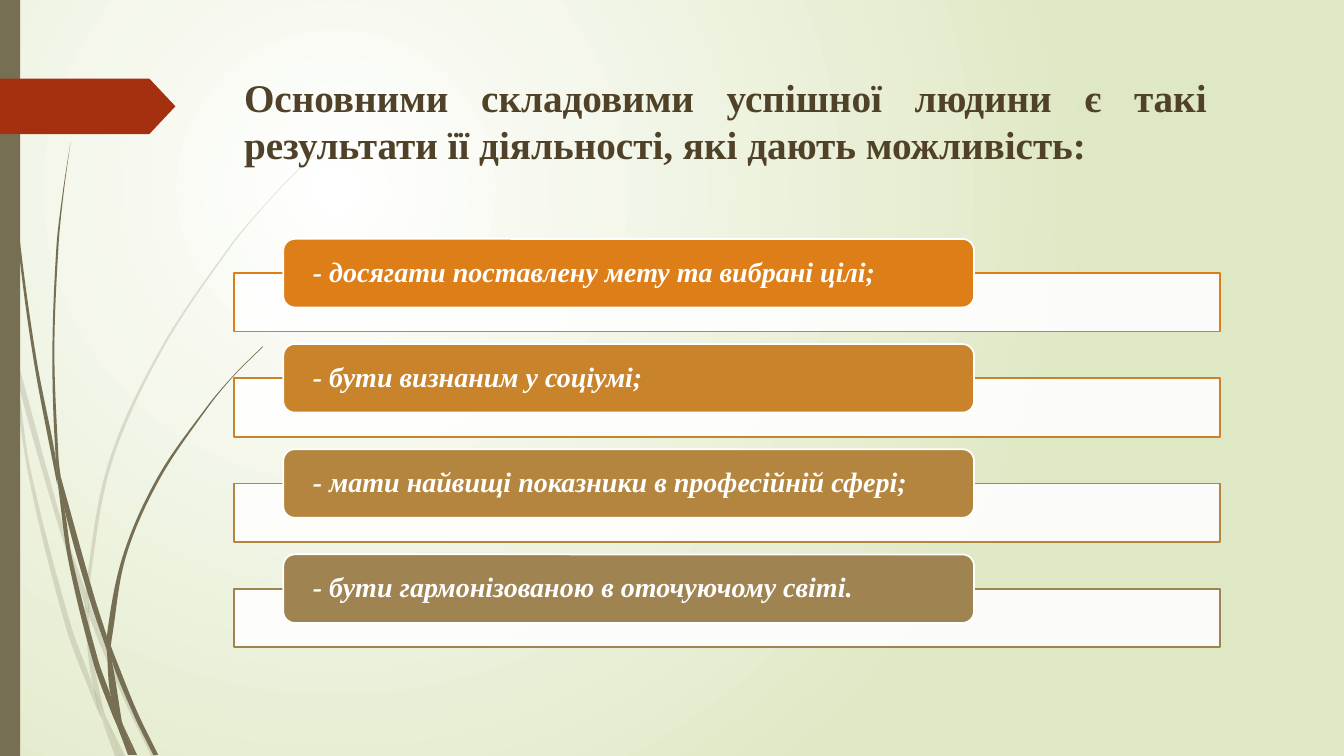
from dataclasses import dataclass

from lxml import etree
from pptx import Presentation
from pptx import util as u
from pptx.dml.color import RGBColor
from pptx.enum import shapes, text
from pptx.oxml.ns import qn

FONT = "Times New Roman"
HUES = {"white": "FFFFFF", "green": "DFE8C4", "olive": "766F54",
        "red": "A53010", "brown": "504228"}
FIRST, LAST = 2.37, 5.5  # tops of the first and last card
GRAIN = 1000  # outline units to the inch


@dataclass
class Leaf:
    """A piece of grass: x, y pairs down its left and its right edge."""
    left: tuple[float, ...]
    right: tuple[float, ...]


@dataclass
class Card:
    words: str
    hue: str


PALE = [
    Leaf((0, 2.99, .1, 3.44, .11, 3.5), (0, 2.82, .09, 3.22, .11, 3.5)),
    Leaf((.14, 3.45, .17, 3.76, .58, 5.22, .84, 5.99),
         (.14, 3.45, .62, 5.2, .85, 5.86)),
    Leaf((.88, 5.96, .88, 6.1, 1.23, 6.94, 1.5, 7.5),
         (.88, 5.96, .92, 6.07, 1.27, 6.92, 1.55, 7.5)),
    Leaf((1.05, 7.11, 1.19, 7.5), (1.05, 7.11, 1.24, 7.5)),
    Leaf((.11, 3.5, .28, 4.7, .65, 6.21, .92, 6.93, 1.01, 7.14),
         (.11, 3.5, .17, 3.76, .31, 4.69, .7, 6.19, .93, 6.83, 1.01, 7.14)),
    Leaf((.84, 5.99, .87, 6.46, .93, 6.83, 1.05, 7.11),
         (.84, 5.99, .88, 6.1, .91, 6.46, 1.03, 7.06, 1.05, 7.11)),
    Leaf((3.12, 1.53, 2.89, 1.75, 2.68, 1.97, 2.28, 2.44, 1.58, 3.48,
          1.07, 4.61, .85, 5.84, .88, 5.96),
         (3.12, 1.54, 2.9, 1.75, 2.68, 1.98, 2.29, 2.45, 1.6, 3.49,
          1.1, 4.62, .88, 5.84, .88, 5.96)),
    Leaf((1.01, 7.14, 1.14, 7.5), (1.01, 7.14, 1.19, 7.5)),
    Leaf((.85, 5.86, .84, 5.99, .88, 6.1), (.85, 5.86, .88, 5.96, .88, 6.1)),
    Leaf((.93, 6.83, .99, 7.07, 1.19, 7.5), (.93, 6.83, 1.05, 7.11, 1.19, 7.5)),
]
DARK = [
    Leaf((.03, 0, .04, .48, .07, 1.1, .17, 2.33, .33, 3.55, .56, 4.77, .57, 4.81),
         (.04, 0, .05, .48, .08, 1.09, .19, 2.32, .36, 3.55, .55, 4.53, .57, 4.81)),
    Leaf((.6, 4.72, .64, 5.05, .88, 5.92, 1.06, 6.45),
         (.6, 4.72, .93, 5.9, 1.06, 6.31)),
    Leaf((1.1, 6.41, 1.11, 6.56, 1.32, 7.08, 1.52, 7.49),
         (1.1, 6.41, 1.13, 6.49, 1.36, 7.06, 1.57, 7.49)),
    Leaf((.57, 4.77, .68, 5.57, .93, 6.59, 1.11, 7.08, 1.17, 7.22),
         (.57, 4.77, .64, 5.05, .72, 5.56, .98, 6.57, 1.1, 6.91, 1.17, 7.22)),
    Leaf((.7, 1.41, .62, 1.93, .56, 2.45, .52, 3.49, .55, 4.49, .6, 4.72),
         (.7, 1.41, .63, 1.93, .58, 2.45, .54, 3.49, .58, 4.53, .6, 4.72)),
    Leaf((1.22, 7.19, 1.33, 7.49), (1.22, 7.19, 1.36, 7.49)),
    Leaf((.55, 4.49, .57, 4.77, .64, 5.05), (.55, 4.49, .6, 4.72, .64, 5.05)),
    Leaf((2.6, 3.44, 2.31, 3.73, 2.04, 4.05, 1.56, 4.74, 1.22, 5.51,
          1.06, 6.31, 1.1, 6.41),
         (2.61, 3.44, 2.31, 3.74, 2.05, 4.06, 1.58, 4.76, 1.25, 5.52,
          1.11, 6.33, 1.1, 6.41)),
    Leaf((1.17, 7.22, 1.27, 7.49), (1.17, 7.22, 1.31, 7.49)),
    Leaf((1.06, 6.45, 1.1, 6.91, 1.22, 7.19),
         (1.06, 6.45, 1.11, 6.56, 1.21, 7.16, 1.22, 7.19)),
    Leaf((1.06, 6.31, 1.06, 6.45, 1.11, 6.56), (1.06, 6.31, 1.1, 6.41, 1.11, 6.56)),
    Leaf((1.1, 6.91, 1.17, 7.22, 1.3, 7.49), (1.1, 6.91, 1.22, 7.19, 1.33, 7.49)),
]
CARDS = [
    Card("- досягати поставлену мету та вибрані цілі;", "DE7E18"),
    Card("- бути визнаним у соціумі;", "C9832B"),
    Card("- мати найвищі показники в професійній сфері;", "B4853E"),
    Card("- бути гармонізованою в оточуючому світі.", "9F8351"),
]


def assign(item, **vals) -> None:
    for name, val in vals.items():
        setattr(item, name, val)


def paint(shape, fill: str, line: str = "", alpha: int = 100) -> None:
    shape.shadow.inherit = False
    shape.fill.solid()
    shape.fill.fore_color.rgb = RGBColor.from_string(fill)
    if alpha < 100:
        tint = shape.element.spPr.find(qn("a:solidFill"))[0]
        etree.SubElement(tint, qn("a:alpha"), val=str(alpha * 1000))
    if line:
        shape.line.color.rgb = RGBColor.from_string(line)
        shape.line.width = u.Pt(1.25)
    else:
        shape.line.fill.background()


def block(slide, kind, box: tuple, fill: str, line: str = "", alpha: int = 100):
    shape = slide.shapes.add_shape(kind, *map(u.Inches, box))
    paint(shape, fill, line, alpha)
    return shape


def write(frame, words: str, hue: str, size: int, **style) -> None:
    frame.text = words
    assign(frame, word_wrap=True, auto_size=text.MSO_AUTO_SIZE.NONE)
    font = frame.paragraphs[0].runs[0].font
    assign(font, name=FONT, size=u.Pt(size), bold=True, **style)
    font.color.rgb = RGBColor.from_string(hue)


def bend(flat: tuple[float, ...]) -> list[complex]:
    """Join the points by curves: each adds two handles and an end."""
    dots = [complex(x, y) for x, y in zip(flat[::2], flat[1::2])]
    pad = [dots[0], *dots, dots[-1]]
    out = dots[:1]
    for a, b, c, d in zip(pad, pad[1:], pad[2:], pad[3:]):
        reach = abs(c - b) / 3
        out += [b + (c - a) / abs(c - a) * reach,
                c - (d - b) / abs(d - b) * reach, c]
    return out


def grow(slide, leaf: Leaf, alpha: int) -> None:
    left, right = bend(leaf.left), bend(leaf.right)[::-1]
    edge = left + [left[-1], right[0]] + right
    dots = [(dot.real * GRAIN, dot.imag * GRAIN) for dot in edge]
    pen = slide.shapes.build_freeform(*dots[0], scale=u.Inches(1) / GRAIN)
    pen.add_line_segments(dots[1:], close=True)
    shape = pen.convert_to_shape()
    # Turn each three line ends into one curve
    lines = list(shape.element.iter(qn("a:lnTo")))
    for trio in zip(lines[::3], lines[1::3], lines[2::3]):
        curve = etree.Element(qn("a:cubicBezTo"))
        trio[0].addprevious(curve)
        for line in trio:
            curve.append(line[0])
            line.getparent().remove(line)
    paint(shape, HUES["olive"], alpha=alpha)


def backdrop(slide) -> None:
    fill = slide.background.fill
    fill.gradient()
    for stop, hue in zip(fill.gradient_stops, ("white", "green")):
        stop.color.rgb = RGBColor.from_string(HUES[hue])
    grad = slide.element.find(".//" + qn("a:gradFill"))
    grad.remove(grad.find(qn("a:lin")))
    ring = etree.SubElement(grad, qn("a:path"), {"path": "circle"})
    etree.SubElement(ring, qn("a:fillToRect"),
                     l="50000", t="50000", r="100000", b="100000")


def heading(slide) -> None:
    title = slide.shapes.title
    assign(title, left=u.Inches(2.32), top=u.Inches(.68),
           width=u.Inches(9.75), height=u.Inches(1.4))
    frame = title.text_frame
    write(frame, "Основними складовими успішної людини є такі результати "
          "її діяльності, які дають можливість:", HUES["brown"], 28)
    frame.vertical_anchor = text.MSO_ANCHOR.TOP
    assign(frame.paragraphs[0], alignment=text.PP_ALIGN.JUSTIFY, line_spacing=1.0)
    title.element.getparent().append(title.element)  # in front of the grass


def draw(slide, card: Card, top: float) -> None:
    kind = shapes.MSO_SHAPE
    block(slide, kind.RECTANGLE, (2.32, top + .34, 9.78, .58),
          HUES["white"], card.hue, 90)
    pill = block(slide, kind.ROUNDED_RECTANGLE, (2.81, top, 6.85, .68),
                 card.hue, HUES["white"])
    frame = pill.text_frame
    write(frame, card.words, HUES["white"], 20, italic=True)
    assign(frame, margin_left=u.Inches(.26), margin_right=u.Inches(.26),
           margin_top=0, margin_bottom=0, vertical_anchor=text.MSO_ANCHOR.MIDDLE)
    assign(frame.paragraphs[0], alignment=text.PP_ALIGN.LEFT, line_spacing=.9)


def main() -> None:
    deck = Presentation()
    assign(deck, slide_width=u.Inches(13.33), slide_height=u.Inches(7.5))
    slide = deck.slides.add_slide(deck.slide_layouts[5])
    backdrop(slide)
    # Grass, side strip and red tag
    for leaves, alpha in ((PALE, 20), (DARK, 100)):
        for leaf in leaves:
            grow(slide, leaf, alpha)
    kind = shapes.MSO_SHAPE
    block(slide, kind.RECTANGLE, (0, 0, .2, 7.5), HUES["olive"])
    tag = block(slide, kind.PENTAGON, (0, .78, 1.74, .55), HUES["red"])
    tag.adjustments[0] = .47
    # Title and list of cards
    heading(slide)
    for row, card in enumerate(CARDS):
        draw(slide, card, FIRST + (LAST - FIRST) / (len(CARDS) - 1) * row)
    deck.save("out.pptx")


if __name__ == "__main__":
    main()
